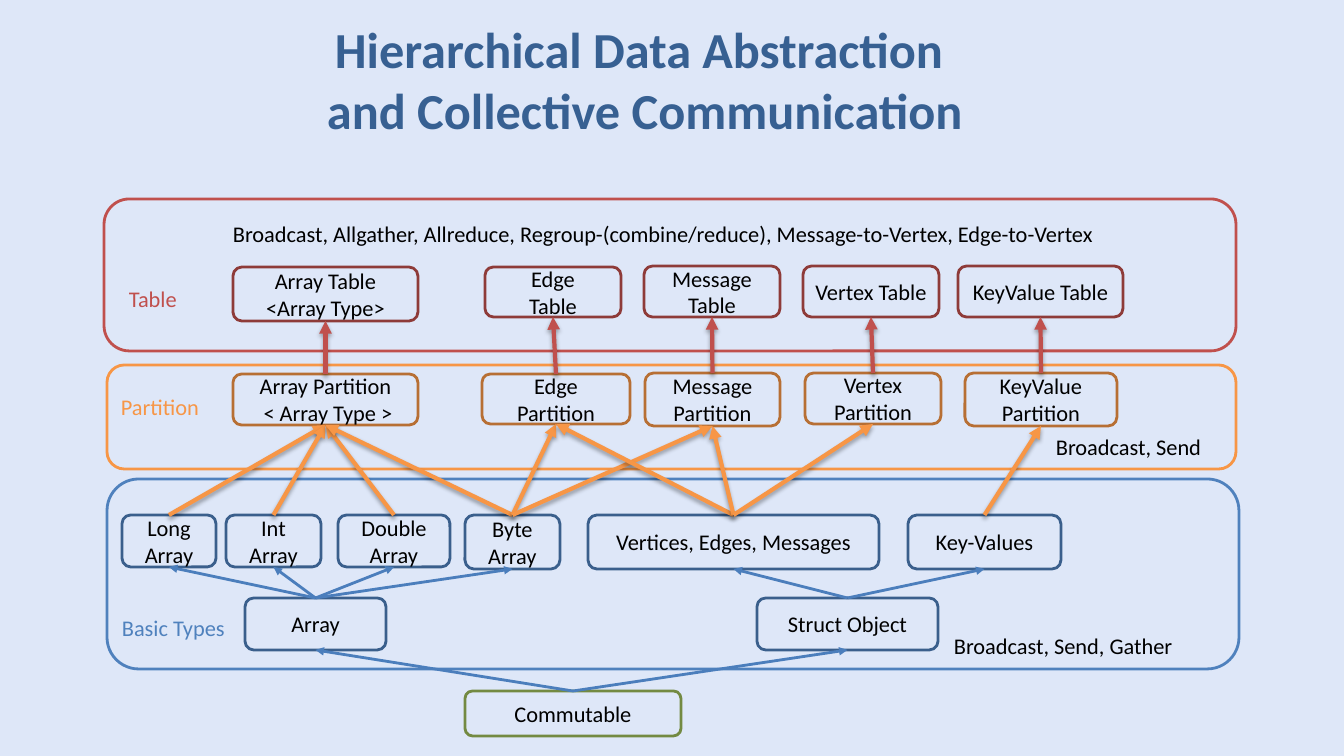
from lxml import etree
from pptx import Presentation
from pptx.dml.color import RGBColor
from pptx.enum.shapes import MSO_CONNECTOR as CONNECTOR, MSO_SHAPE as SHAPE
from pptx.enum.text import MSO_ANCHOR as ANCHOR, PP_ALIGN as ALIGN
from pptx.oxml.ns import qn
from pptx.util import Emu, Pt

EMU_PER_PX = 914400 / 100.8
FONT = "Calibri"
BACKGROUND, BLACK, TITLE_BLUE = "DEE7F8", "000000", "376092"
RED, ORANGE, BLUE = "C0504D", "F79646", "4F81BD"
DARK_RED, DARK_ORANGE, DARK_BLUE, GREEN = "8E3B39", "B76F34", "3A5F8C", "738A42"
ARROW_BLUE = "4B7EBC"
TOP, BOTTOM = 0, 2


def px(*lengths):
    return [Emu(round(length * EMU_PER_PX)) for length in lengths]


def color(hex_code):
    return RGBColor.from_string(hex_code)


def format_text(frame, size, hex_code, align, bold=False):
    for paragraph in frame.paragraphs:
        paragraph.alignment = align
        for run in paragraph.runs:
            run.font.name = FONT
            run.font.size = Pt(size)
            run.font.bold = bold
            run.font.color.rgb = color(hex_code)


def add_box(slide, box, line, text=""):
    shape = slide.shapes.add_shape(SHAPE.ROUNDED_RECTANGLE, *px(*box))
    shape.shadow.inherit = False
    shape.fill.solid()
    shape.fill.fore_color.rgb = color(BACKGROUND)
    shape.line.color.rgb = color(line)
    shape.line.width = Pt(2)
    frame = shape.text_frame
    frame.word_wrap = True
    frame.vertical_anchor = ANCHOR.MIDDLE
    frame.text = text
    format_text(frame, 16, BLACK, ALIGN.CENTER)
    return shape


def add_label(slide, box, text, hex_code):
    frame = slide.shapes.add_textbox(*px(*box)).text_frame
    frame.word_wrap = True
    frame.text = text
    format_text(frame, 16, hex_code, ALIGN.LEFT)


def add_arrow(slide, source, target, hex_code, width, shadow=False):
    arrow = slide.shapes.add_connector(CONNECTOR.STRAIGHT, 0, 0, 0, 0)
    arrow.begin_connect(source, TOP)
    arrow.end_connect(target, BOTTOM)
    arrow.line.color.rgb = color(hex_code)
    arrow.line.width = Pt(width)
    etree.SubElement(arrow.line._get_or_add_ln(), qn("a:tailEnd"), type="triangle")
    effects = etree.SubElement(arrow._element.spPr, qn("a:effectLst"))
    if shadow:
        outer = etree.SubElement(effects, qn("a:outerShdw"), blurRad="40000",
                                 dist="23000", dir="5400000", rotWithShape="0")
        black = etree.SubElement(outer, qn("a:srgbClr"), val=BLACK)
        etree.SubElement(black, qn("a:alpha"), val="35000")


def add_title(slide, box, text):
    title = slide.shapes.title
    title.left, title.top, title.width, title.height = px(*box)
    title.text_frame.text = text
    title.text_frame.vertical_anchor = ANCHOR.MIDDLE
    format_text(title.text_frame, 36, TITLE_BLUE, ALIGN.CENTER, bold=True)


def add_band(slide, box, line, node_line, label, note, nodes):
    """Draw a framed level; all parts are offset from the frame's corner."""
    left, top = box[:2]
    add_box(slide, box, line)
    for (x, y, width), text, hex_code in ((*label, line), (*note, BLACK)):
        add_label(slide, (left + x, top + y, width, 37), text, hex_code)
    return {name: add_box(slide, (left + x, top + y, width, height), node_line, text)
            for name, (x, y, width, height, text) in nodes.items()}


def build_slide(presentation):
    slide = presentation.slides.add_slide(presentation.slide_layouts[5])
    slide.background.fill.solid()
    slide.background.fill.fore_color.rgb = color(BACKGROUND)
    add_title(slide, (17, 6, 1256, 146),
              "Hierarchical Data Abstraction \vand Collective Communication")

    # Three levels and the common root
    partitions = add_band(
        slide, (107, 365, 1129, 104), ORANGE, DARK_ORANGE,
        ((4, 23, 118), "Partition"), ((939, 63, 174), "Broadcast, Send"),
        {"array": (126, 9, 185, 51, "Array Partition\v < Array Type >"),
         "edge": (375, 9, 148, 50, "Edge Partition"),
         "message": (538, 8, 135, 53, "Message Partition"),
         "vertex": (698, 8, 136, 51, "Vertex Partition"),
         "key_value": (858, 8, 152, 53, "KeyValue Partition")})
    tables = add_band(
        slide, (104, 199, 1132, 152), RED, DARK_RED,
        ((15, 81, 107), "Table"),
        ((119, 16, 963), "Broadcast, Allgather, Allreduce, Regroup-(combine/reduce), "
                         "Message-to-Vertex, Edge-to-Vertex"),
        {"array": (129, 68, 185, 54, "Array Table <Array Type>"),
         "edge": (381, 68, 136, 50, "Edge\nTable"),
         "message": (540, 67, 136, 51, "Message Table"),
         "vertex": (699, 67, 136, 51, "Vertex Table"),
         "key_value": (854, 67, 165, 51, "KeyValue Table")})
    basics = add_band(
        slide, (107, 479, 1132, 190), BLUE, DARK_BLUE,
        ((5, 130, 130), "Basic Types"), ((837, 148, 276), "Broadcast, Send, Gather"),
        {"long": (15, 36, 94, 52, "Long Array"),
         "int": (119, 36, 95, 52, "Int Array"),
         "double": (231, 36, 112, 52, "Double Array"),
         "byte": (358, 36, 95, 54, "Byte Array"),
         "graph": (481, 36, 291, 54, "Vertices, Edges, Messages"),
         "key_value": (801, 36, 153, 54, "Key-Values"),
         "array": (138, 119, 141, 52, "Array"),
         "struct": (650, 119, 181, 52, "Struct Object")})
    commutable = add_box(slide, (465, 691, 216, 45), GREEN, "Commutable")

    # Inheritance among the basic types
    children = {"array": ("long", "int", "double", "byte"),
                "struct": ("graph", "key_value")}
    for parent, names in children.items():
        add_arrow(slide, commutable, basics[parent], ARROW_BLUE, 2)
        for name in names:
            add_arrow(slide, basics[parent], basics[name], ARROW_BLUE, 2)

    # Basic types form partitions
    memberships = {"long": ("array",), "int": ("array",), "double": ("array",),
                   "byte": ("array", "edge", "message"),
                   "graph": ("edge", "message", "vertex"),
                   "key_value": ("key_value",)}
    for name, targets in memberships.items():
        for target in targets:
            add_arrow(slide, basics[name], partitions[target], ORANGE, 3, shadow=True)

    # Partitions form tables
    for name, table in tables.items():
        add_arrow(slide, partitions[name], table, RED, 3, shadow=True)


def main():
    presentation = Presentation()
    presentation.slide_width, presentation.slide_height = px(1344, 756)
    build_slide(presentation)
    presentation.save("out.pptx")


if __name__ == "__main__":
    main()
